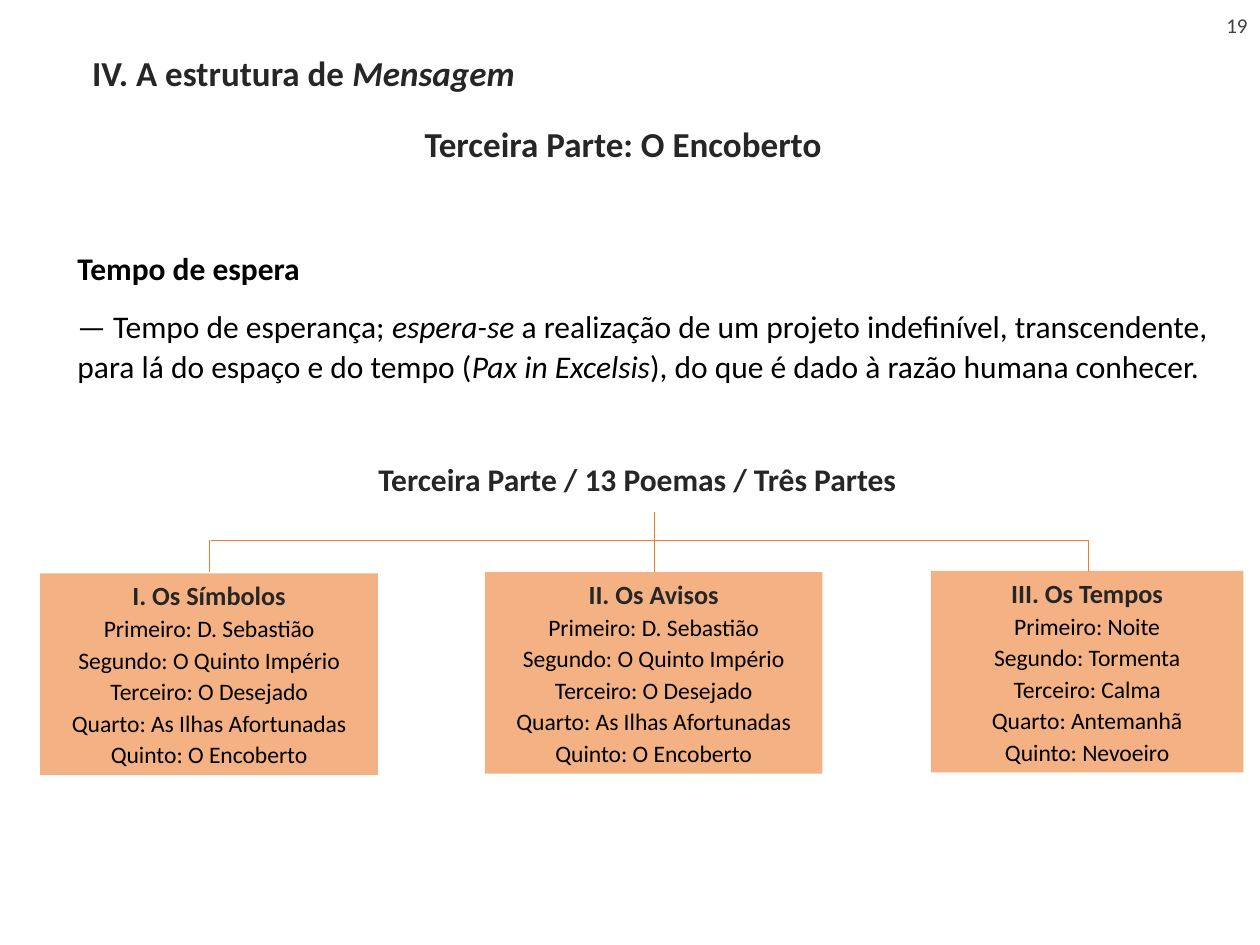
from dataclasses import dataclass
from typing import Any, NamedTuple

from lxml.etree import SubElement
from pptx import Presentation
from pptx.dml.color import RGBColor
from pptx.enum.shapes import MSO_CONNECTOR as Connector, MSO_SHAPE as Preset
from pptx.enum.text import MSO_ANCHOR as Anchor, MSO_AUTO_SIZE as AutoSize, PP_ALIGN as Align
from pptx.oxml.ns import qn
from pptx.util import Pt


@dataclass(frozen=True)
class Theme:
    font: str = "Calibri"
    ink: RGBColor = RGBColor(0x26, 0x26, 0x26)
    black: RGBColor = RGBColor(0, 0, 0)
    grey: RGBColor = RGBColor(0x40, 0x40, 0x40)
    card: RGBColor = RGBColor(0xF4, 0xB1, 0x83)
    branch: RGBColor = RGBColor(0xED, 0x7D, 0x31)
    heading_size: float = 20
    text_size: float = 18
    card_title_size: float = 15
    poem_size: float = 13.5
    number_size: float = 12
    branch_width: float = 0.5


class Box(NamedTuple):
    left: float
    top: float
    width: float
    height: float


class Run(NamedTuple):
    text: str
    italic: bool = False


class Line(NamedTuple):
    runs: tuple[Run, ...]
    size: float
    color: RGBColor
    bold: bool = False
    layout: dict[str, Any] = {}


class Card(NamedTuple):
    box: Box
    heading: str
    poems: tuple[str, ...]


class Branch(NamedTuple):
    x1: float
    y1: float
    x2: float
    y2: float


THEME = Theme()
CENTERED = {"alignment": Align.CENTER}
HEADING = {"line_spacing": 0.8}
CARD_LINE = {**CENTERED, "line_spacing": Pt(18)}
FITTED = {"word_wrap": True, "auto_size": AutoSize.SHAPE_TO_FIT_TEXT, "vertical_anchor": Anchor.TOP}
FIXED = {**FITTED, "auto_size": AutoSize.NONE}

SYMBOL_POEMS = (
    "Primeiro: D. Sebastião",
    "Segundo: O Quinto Império",
    "Terceiro: O Desejado",
    "Quarto: As Ilhas Afortunadas",
    "Quinto: O Encoberto",
)
TIME_POEMS = (
    "Primeiro: Noite",
    "Segundo: Tormenta",
    "Terceiro: Calma",
    "Quarto: Antemanhã",
    "Quinto: Nevoeiro",
)
CARDS = (
    Card(Box(23, 327.6, 193, 115.2), "I. Os Símbolos", SYMBOL_POEMS),
    Card(Box(277, 326.9, 193, 115.2), "II. Os Avisos", SYMBOL_POEMS),
    Card(Box(531.9, 326.2, 178.6, 115.2), "III. Os Tempos", TIME_POEMS),
)
BRANCHES = (
    Branch(120.5, 308.8, 622, 308.8),
    Branch(119.5, 308.8, 119.5, 327),
    Branch(373.9, 292.8, 373.9, 327),
    Branch(622, 308.8, 622, 327),
)


def apply(target: Any, values: dict[str, Any]) -> None:
    for name, value in values.items():
        setattr(target, name, value)


def place(shape: Any, box: Box) -> None:
    apply(shape, {name: Pt(value) for name, value in box._asdict().items()})


def write(shape: Any, lines: list[Line], frame_format: dict[str, Any]) -> None:
    frame = shape.text_frame
    apply(frame, frame_format)
    for index, line in enumerate(lines):
        paragraph = frame.add_paragraph() if index else frame.paragraphs[0]
        apply(paragraph, line.layout)
        for part in line.runs:
            run = paragraph.add_run()
            run.text = part.text
            apply(run.font, {
                "name": THEME.font,
                "size": Pt(line.size),
                "bold": line.bold,
                "italic": part.italic,
            })
            run.font.color.rgb = line.color


def add_text(slide: Any, box: Box, lines: list[Line], frame_format: dict[str, Any]) -> None:
    label = slide.shapes.add_textbox(*map(Pt, box))
    write(label, lines, frame_format)


def add_card(slide: Any, card: Card) -> None:
    panel = slide.shapes.add_shape(Preset.RECTANGLE, *map(Pt, card.box))
    panel.shadow.inherit = False
    panel.fill.solid()
    panel.fill.fore_color.rgb = THEME.card
    panel.line.fill.background()
    heading = Line((Run(card.heading),), THEME.card_title_size, THEME.ink, True, CARD_LINE)
    poems = [Line((Run(poem),), THEME.poem_size, THEME.black, layout=CARD_LINE) for poem in card.poems]
    write(panel, [heading, *poems], FITTED)


def add_branch(slide: Any, branch: Branch) -> None:
    connector = slide.shapes.add_connector(Connector.STRAIGHT, *map(Pt, branch))
    connector.line.color.rgb = THEME.branch
    connector.line.width = Pt(THEME.branch_width)
    SubElement(connector._element.spPr, qn("a:effectLst"))


def main() -> None:
    deck = Presentation()
    apply(deck, {"slide_width": Pt(720), "slide_height": Pt(540)})
    slide = deck.slides.add_slide(deck.slide_layouts[5])

    title = slide.shapes.title
    place(title, Box(34.6, 30.2, 428.4, 27.4))
    title_runs = (Run("IV. A estrutura de "), Run("Mensagem", True))
    title_layout = {**HEADING, "alignment": Align.LEFT}
    write(title, [Line(title_runs, THEME.heading_size, THEME.ink, True, title_layout)],
          {**FITTED, "margin_left": Pt(18)})

    add_text(slide, Box(558, 0, 162, 28.8),
             [Line((Run("19"),), THEME.number_size, THEME.grey, layout={"alignment": Align.RIGHT})],
             {**FIXED, "vertical_anchor": Anchor.MIDDLE})
    add_text(slide, Box(204.5, 71.3, 303.1, 27.4),
             [Line((Run("Terceira Parte: O Encoberto"),), THEME.heading_size, THEME.ink, True,
                   {**HEADING, **CENTERED})], FITTED)

    description = (
        Run("— Tempo de esperança; "),
        Run("espera-se", True),
        Run(" a realização de um projeto indefinível, transcendente, "
            "para lá do espaço e do tempo ("),
        Run("Pax in Excelsis", True),
        Run("), do que é dado à razão humana conhecer."),
    )
    add_text(slide, Box(38.9, 141.8, 660.2, 93.6), [
        Line((Run("Tempo de espera"),), THEME.text_size, THEME.black, True, {"line_spacing": 0.9}),
        Line(description, THEME.text_size, THEME.black,
             layout={"line_spacing": Pt(23), "space_before": Pt(10)}),
    ], {**FIXED, "margin_left": Pt(5.4), "margin_right": Pt(5.4),
        "margin_top": Pt(2.7), "margin_bottom": Pt(2.7)})

    for card in CARDS:
        add_card(slide, card)
    for branch in BRANCHES:
        add_branch(slide, branch)
    add_text(slide, Box(173.5, 259.2, 381.6, 28.8),
             [Line((Run("Terceira Parte / 13 Poemas / Três Partes"),), THEME.text_size, THEME.ink,
                   True, CENTERED)], FITTED)

    deck.save("out.pptx")


if __name__ == "__main__":
    main()
